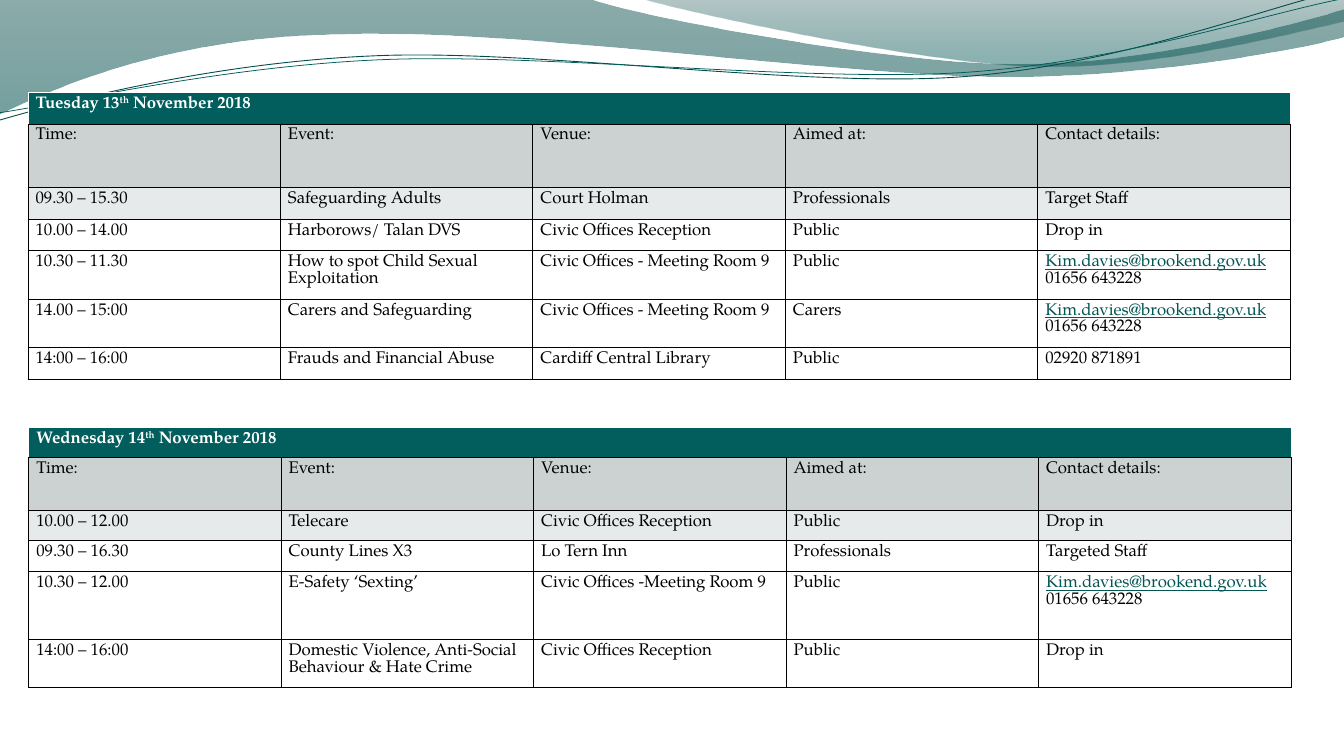
from lxml import etree
from pptx import Presentation
from pptx.dml.color import RGBColor
from pptx.oxml.ns import qn
from pptx.util import Inches, Pt

COLORS = {
    "header": "025E5C", "labels": "CCD2D2", "band": "E7EAEA", "link": "035654",
    "black": "000000", "white": "FFFFFF", "outer_line": "034C4A",
    "wide_top": "004745", "wide_bottom": "00514F",
    "right_top": "004240", "right_bottom": "005553",
}
FONT = "TeX Gyre Pagella"
COLUMN_WIDTH = 3.34
LABELS = ["Time:", "Event:", "Venue:", "Aimed at:", "Contact details:"]
CONTACT = "Kim.davies@brookend.gov.uk\n01656 643228"
RECEPTION = "Civic Offices Reception"

# Each outline is a start point, then line ends (x, y) or Bézier triples.
WIDE_WAVE = [
    (0, -0.01), (7.83, -0.01), (8.46, 0.22, 11.8, 0.84, 13.48, 0.84),
    (15.17, 0.84, 17.04, 0.34, 17.78, 0.12), (17.8, 0.48),
    (17.48, 0.58, 15.46, 1.01, 13.26, 1.01), (11.06, 1, 6.79, 0.37, 4.57, 0.45),
    (2.3, 0.47, 0.81, 1.11, -0.02, 1.51),
]
RIGHT_WAVE = [
    (8.52, -0.01), (9.06, 0.15, 12.12, 0.82, 13.67, 0.87),
    (15.21, 0.92, 17.09, 0.43, 17.78, 0.28), (17.78, 0),
]
OUTER_LINE = [
    (-0.01, 1.59), (0.85, 1.34, 2.81, 0.83, 4.92, 0.74),
    (7.03, 0.64, 10.53, 1.16, 12.66, 1.02), (14.8, 0.87, 16.69, 0.11, 17.75, -0.13),
]
INNER_LINE = [
    (0, 1.49), (0.84, 1.37, 2.91, 0.88, 5.04, 0.79),
    (7.16, 0.7, 10.61, 1.09, 12.74, 0.96), (14.86, 0.82, 16.73, 0.18, 17.78, -0.02),
]

TUESDAY = [
    ["09.30 – 15.30", "Safeguarding Adults", "Court Holman", "Professionals", "Target Staff"],
    ["10.00 – 14.00", "Harborows/ Talan DVS", RECEPTION, "Public", "Drop in"],
    ["10.30 – 11.30", "How to spot Child Sexual Exploitation",
     "Civic Offices - Meeting Room 9", "Public", CONTACT],
    ["14.00 – 15:00", "Carers and Safeguarding",
     "Civic Offices - Meeting Room 9", "Carers", CONTACT],
    ["14:00 – 16:00", "Frauds and Financial Abuse", "Cardiff Central Library",
     "Public", "02920 871891"],
]
WEDNESDAY = [
    ["10.00 – 12.00", "Telecare", RECEPTION, "Public", "Drop in"],
    ["09.30 – 16.30", "County Lines X3", "Lo Tern Inn", "Professionals", "Targeted Staff"],
    ["10.30 – 12.00", "E-Safety ‘Sexting’", "Civic Offices -Meeting Room 9", "Public", CONTACT],
    ["14:00 – 16:00", "Domestic Violence, Anti-Social Behaviour & Hate Crime",
     RECEPTION, "Public", "Drop in"],
]


def rgb(name):
    return RGBColor.from_string(COLORS[name])


def bend(shape, segments):
    """Join each three straight steps of a Bézier segment into one curve."""
    lines = iter(list(shape._element.iter(qn("a:lnTo"))))
    for segment in segments:
        steps = [next(lines) for _ in range(len(segment) // 2)]
        if len(steps) == 3:
            curve = etree.Element(qn("a:cubicBezTo"))
            steps[0].addprevious(curve)
            for step in steps:
                curve.append(step[0])
                step.getparent().remove(step)


def set_borders(cell, sides):
    properties = cell._tc.get_or_add_tcPr()
    for side in "LRTB":
        line = etree.SubElement(properties, qn(f"a:ln{side}"), w=str(Pt(1)))
        fill = etree.SubElement(line, qn("a:solidFill"))
        etree.SubElement(fill, qn("a:srgbClr"), val=COLORS[sides[side]])


class ProgrammeSlide:
    def __init__(self, slide):
        self.slide = slide

    def outline(self, outline, close):
        points = [(Inches(x), Inches(y)) for segment in outline
                  for x, y in zip(segment[::2], segment[1::2])]
        builder = self.slide.shapes.build_freeform(*points[0])
        builder.add_line_segments(points[1:], close=close)
        shape = builder.convert_to_shape()
        bend(shape, outline[1:])
        shape.shadow.inherit = False
        return shape

    def wave(self, outline, stops):
        """Draw a closed shape; stops are (position, colour, opacity %)."""
        shape = self.outline(outline, close=True)
        shape.line.fill.background()
        shape.fill.gradient()
        shape.fill.gradient_angle = 270
        for stop, (position, color, opacity) in zip(shape.fill.gradient_stops, stops):
            stop.position = position
            stop.color.rgb = rgb(color)
            color_element = stop._gs.find(qn("a:srgbClr"))
            etree.SubElement(color_element, qn("a:alpha"), val=str(opacity * 1000))

    def curve(self, outline, color, width):
        shape = self.outline(outline, close=False)
        shape.fill.background()
        shape.line.color.rgb = rgb(color)
        shape.line.width = Pt(width)

    def cell(self, cell, content, fill=None, color="black", bold=False, edge="black"):
        set_borders(cell, {"L": edge, "R": edge, "T": edge, "B": "black"})
        if fill:
            cell.fill.solid()
            cell.fill.fore_color.rgb = rgb(fill)
        else:
            cell.fill.background()
        cell.margin_top = Inches(0.05)
        cell.margin_bottom = 0
        cell.text_frame.text = content
        for paragraph in cell.text_frame.paragraphs:
            is_link = "@" in paragraph.text
            paragraph.line_spacing = Pt(16)
            font = paragraph.font
            font.name, font.size, font.bold = FONT, Pt(16), bold
            font.underline = is_link
            font.color.rgb = rgb("link" if is_link else color)

    def timetable(self, left, top, day, heights, events):
        rows = [LABELS] + events
        table = self.slide.shapes.add_table(
            len(heights), len(LABELS), Inches(left), Inches(top),
            Inches(COLUMN_WIDTH * len(LABELS)), Inches(sum(heights))).table
        table.first_row = table.horz_banding = False
        for column in table.columns:
            column.width = Inches(COLUMN_WIDTH)
        for row, height in zip(table.rows, heights):
            row.height = Inches(height)

        for cell in table.rows[0].cells:
            self.cell(cell, "", "header", "white", bold=True, edge="white")
        title = table.cell(0, 0)
        title.merge(table.cell(0, len(LABELS) - 1))
        paragraph = title.text_frame.paragraphs[0]
        for part in (day, "th", " November 2018"):
            run = paragraph.add_run()
            run.text = part
            if part == "th":
                run._r.get_or_add_rPr().set("baseline", "30000")

        fills = ["labels", "band"] + [None] * (len(rows) - 2)
        for index, (row, fill) in enumerate(zip(rows, fills), start=1):
            for cell, content in zip(table.rows[index].cells, row):
                self.cell(cell, content, fill)


def main():
    presentation = Presentation()
    presentation.slide_width, presentation.slide_height = Inches(17.78), Inches(10)
    page = ProgrammeSlide(presentation.slides.add_slide(presentation.slide_layouts[6]))
    page.wave(WIDE_WAVE, [(0, "wide_top", 45), (1, "wide_bottom", 55)])
    page.wave(RIGHT_WAVE, [(0, "right_top", 30), (0.8, "right_bottom", 45)])
    page.curve(OUTER_LINE, "outer_line", 0.85)
    page.curve(INNER_LINE, "header", 0.75)
    page.timetable(0.37, 1.22, "Tuesday 13",
                   [0.42, 0.84, 0.42, 0.42, 0.64, 0.64, 0.42], TUESDAY)
    page.timetable(0.38, 5.65, "Wednesday 14",
                   [0.4, 0.7, 0.4, 0.41, 0.9, 0.63], WEDNESDAY)
    presentation.save("out.pptx")


if __name__ == "__main__":
    main()
